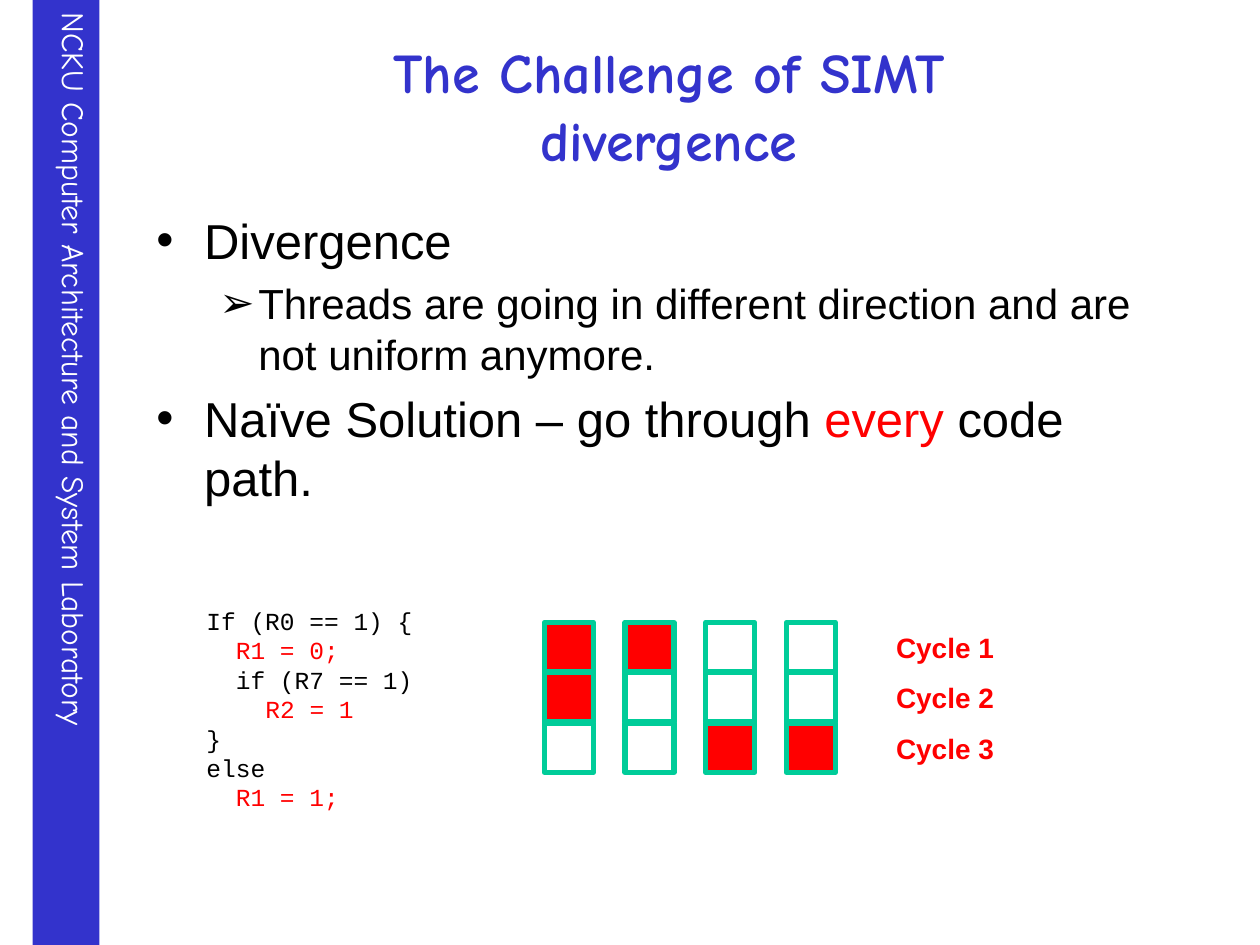
from copy import deepcopy
from typing import NamedTuple

from lxml import etree
from pptx import Presentation
from pptx import util as u
from pptx.dml.color import RGBColor
from pptx.enum import shapes, text
from pptx.oxml.ns import qn

COLORS = {"blue": "3333CC", "white": "FFFFFF", "black": "000000", "red": "FF0000", "green": "00CC99"}
WIDTH, HEIGHT = 10, 7.5


class Box(NamedTuple):
    left: float
    top: float
    width: float
    height: float


class Style(NamedTuple):
    name: str
    size: float
    color: str = "black"
    bold: bool = False


class Bullet(NamedTuple):
    level: int
    mark: str
    margin: float
    hanging: float
    size: float
    before: float
    phrases: list


class Grid(NamedTuple):
    left: float
    top: float
    column: float
    row: float
    cell: float

    def box(self, column: int, row: int) -> Box:
        return Box(self.left + column * self.column, self.top + row * self.row, self.cell, self.cell)


LANES = Grid(left=4.32, top=4.94, column=0.64, row=0.4, cell=0.39)
ACTIVITY = ["##..", "#...", "..##"]
BULLETS = [
    Bullet(0, "•", 0.38, 0.38, 28, 0, [("Divergence", "black")]),
    Bullet(1, "➢", 0.81, 0.31, 24, 4.8,
           [("Threads are going in different direction and are not uniform anymore.", "black")]),
    Bullet(0, "•", 0.38, 0.38, 28, 5.6,
           [("Naïve Solution – go through ", "black"), ("every", "red"), (" code path.", "black")]),
]
CODE = [
    [("If (R0 == 1) {", "black")],
    [("  ", "black"), ("R1 = 0;", "red")],
    [("  if (R7 == 1)", "black")],
    [("    ", "black"), ("R2 = 1", "red")],
    [("}", "black")],
    [("else", "black")],
    [("  ", "black"), ("R1 = 1;", "red")],
]


def rgb(color: str) -> RGBColor:
    """Look up a named colour."""
    return RGBColor.from_string(COLORS[color])


def inches(box: Box) -> list:
    """Turn a box into slide lengths."""
    return [u.Inches(value) for value in box]


def assign(target, values: dict) -> None:
    """Set each attribute named in values."""
    for key, value in values.items():
        setattr(target, key, value)


def format_run(run, style: Style) -> None:
    """Apply a style to one run."""
    assign(run.font, {"name": style.name, "size": u.Pt(style.size), "bold": style.bold})
    run.font.color.rgb = rgb(style.color)


def add_phrases(paragraph, phrases: list, style: Style) -> None:
    """Append coloured stretches of text to a paragraph."""
    for words, color in phrases:
        run = paragraph.add_run()
        run.text = words
        format_run(run, style._replace(color=color))


def paragraphs(frame, count: int) -> list:
    """Return the frame's paragraphs, extended to count."""
    return [frame.paragraphs[0]] + [frame.add_paragraph() for _ in range(count - 1)]


def place(placeholder, box: Box, anchor) -> None:
    """Move a placeholder and fix its text size."""
    assign(placeholder, dict(zip(Box._fields, inches(box))))
    assign(placeholder.text_frame, {"auto_size": text.MSO_AUTO_SIZE.NONE, "vertical_anchor": anchor,
                                    "word_wrap": True})


def add_rect(slide, box: Box, fill: str = "", line: str = ""):
    """Draw a rectangle with an optional fill and outline."""
    rect = slide.shapes.add_shape(shapes.MSO_SHAPE.RECTANGLE, *inches(box))
    rect.shadow.inherit = False
    for paint, color in ((rect.fill, fill), (rect.line.fill, line)):
        if color:
            paint.solid()
            paint.fore_color.rgb = rgb(color)
        else:
            paint.background()
    if line:
        rect.line.width = u.Pt(3)
    return rect


def add_sidebar(slide, words: str) -> None:
    """Draw the vertical laboratory banner."""
    frame = add_rect(slide, Box(0.26, 0, 0.53, HEIGHT), "blue").text_frame
    assign(frame, {"vertical_anchor": text.MSO_ANCHOR.TOP, "word_wrap": True})
    frame._txBody.bodyPr.set("vert", "eaVert")
    frame.paragraphs[0].alignment = text.PP_ALIGN.LEFT
    add_phrases(frame.paragraphs[0], [(words, "white")], Style("Comic Neue", 18))


def fill_title(title, words: str) -> None:
    """Write the title, keeping its line break at the title size."""
    place(title, Box(0.9, 0.21, 8.82, 1.25), text.MSO_ANCHOR.MIDDLE)
    paragraph = title.text_frame.paragraphs[0]
    paragraph.text = words
    paragraph.alignment = text.PP_ALIGN.CENTER
    for run in paragraph.runs:
        format_run(run, Style("Comic Neue", 32, "blue", True))
    for line_break in paragraph._p.findall(qn("a:br")):
        line_break.append(deepcopy(paragraph.runs[0]._r.rPr))


def fill_body(body, bullets: list) -> None:
    """Write the bulleted list."""
    place(body, Box(1.14, 1.62, 8.11, 5.04), text.MSO_ANCHOR.TOP)
    for paragraph, bullet in zip(paragraphs(body.text_frame, len(bullets)), bullets):
        assign(paragraph, {"level": bullet.level, "space_before": u.Pt(bullet.before)})
        properties = paragraph._p.get_or_add_pPr()
        properties.set("marL", str(u.Inches(bullet.margin)))
        properties.set("indent", str(-u.Inches(bullet.hanging)))
        etree.SubElement(properties, qn("a:buFont")).set("typeface", "Arial")
        etree.SubElement(properties, qn("a:buChar")).set("char", bullet.mark)
        add_phrases(paragraph, bullet.phrases, Style("Arial", bullet.size))


def add_code(slide, lines: list) -> None:
    """Write the branching code sample."""
    frame = slide.shapes.add_textbox(*inches(Box(1.54, 4.76, 2.07, 1.75))).text_frame
    frame.word_wrap = True
    for paragraph, phrases in zip(paragraphs(frame, len(lines)), lines):
        add_phrases(paragraph, phrases, Style("Courier New", 14))


def add_cycle(slide, row: int, activity: str) -> None:
    """Draw one cycle of lane cells with its label."""
    for column, state in enumerate(activity):
        add_rect(slide, LANES.box(column, row), "red" if state == "#" else "", "green")
    label = LANES.box(0, row)._replace(left=6.91, width=1.18)
    frame = slide.shapes.add_textbox(*inches(label)).text_frame
    assign(frame, {"word_wrap": False, "vertical_anchor": text.MSO_ANCHOR.MIDDLE})
    frame.paragraphs[0].alignment = text.PP_ALIGN.CENTER
    add_phrases(frame.paragraphs[0], [(f"Cycle {row + 1}", "red")], Style("Arial", 16, bold=True))


def main() -> None:
    """Build and save the slide."""
    deck = Presentation()
    assign(deck, {"slide_width": u.Inches(WIDTH), "slide_height": u.Inches(HEIGHT)})
    slide = deck.slides.add_slide(deck.slide_layouts[1])
    add_sidebar(slide, "NCKU Computer Architecture and System Laboratory")
    fill_title(slide.shapes.title, "The Challenge of SIMT\vdivergence")
    fill_body(slide.placeholders[1], BULLETS)
    add_code(slide, CODE)
    for row, activity in enumerate(ACTIVITY):
        add_cycle(slide, row, activity)
    deck.save("out.pptx")


if __name__ == "__main__":
    main()
